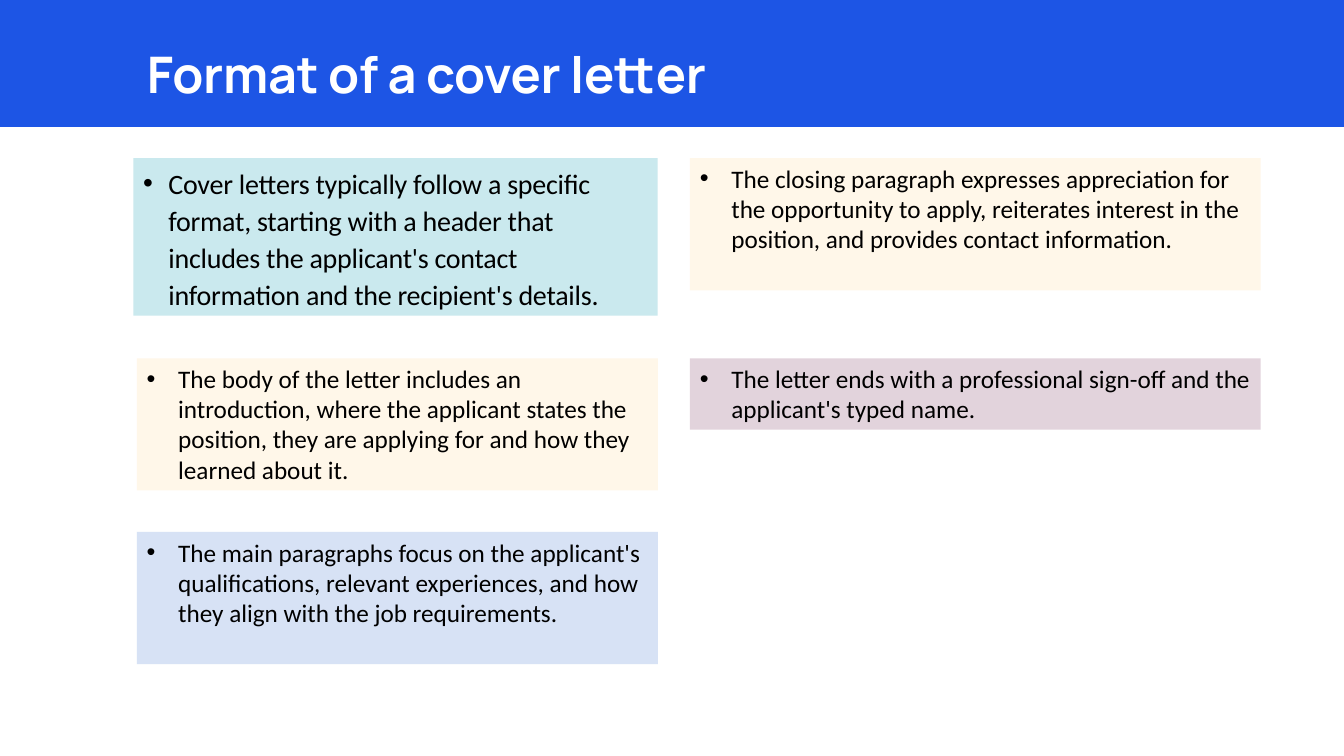
"""Build the slide on the format of a cover letter."""
from dataclasses import dataclass

from lxml.etree import SubElement
from pptx import Presentation
from pptx.dml.color import RGBColor
from pptx.enum.shapes import MSO_SHAPE
from pptx.enum.text import MSO_ANCHOR, PP_ALIGN
from pptx.oxml.ns import qn
from pptx.util import Pt


@dataclass(frozen=True)
class Theme:
    banner: str = "1D55E5"
    teal: str = "CAE9EE"
    cream: str = "FFF7E9"
    blue: str = "D7E2F5"
    mauve: str = "E2D3DC"
    title_ink: str = "FFFFFF"
    ink: str = "000000"
    title_size: int = 36
    lead_size: int = 20
    body_size: int = 18


theme = Theme()
TITLE = {"name": "Manrope", "size": Pt(theme.title_size), "bold": True}
LEAD = {"name": "Calibri", "size": Pt(theme.lead_size), "bold": False}
BODY = {"name": "Calibri", "size": Pt(theme.body_size), "bold": False}


def add_panel(slide, box, fill):
    panel = slide.shapes.add_shape(MSO_SHAPE.RECTANGLE, *map(Pt, box))
    panel.shadow.inherit = False
    panel.fill.solid()
    panel.fill.fore_color.rgb = RGBColor.from_string(fill)
    panel.line.fill.background()
    return panel


def write(paragraph, wording, text_format, ink, tracking=0):
    run = paragraph.add_run()
    run.text = wording
    for attribute, value in text_format.items():
        setattr(run.font, attribute, value)
    run.font.color.rgb = RGBColor.from_string(ink)
    if tracking:
        run.font._element.set("spc", str(tracking))


presentation = Presentation()
presentation.slide_width, presentation.slide_height = Pt(960), Pt(540)
slide = presentation.slides.add_slide(presentation.slide_layouts[6])

add_panel(slide, (0, 0, 960, 90.7), theme.banner)
heading = slide.shapes.add_textbox(Pt(97.9), Pt(21.6), Pt(790.6), Pt(61.2))
heading.text_frame.word_wrap = True
heading.text_frame.vertical_anchor = MSO_ANCHOR.MIDDLE
write(heading.text_frame.paragraphs[0], "Format of a cover letter", TITLE, theme.title_ink, -20)

LEFT, LEFT_WIDTH = 97.7, 372.2
RIGHT, RIGHT_WIDTH = 492.8, 407.6
TOP, MIDDLE, BOTTOM = 113, 256, 380
TALL, SHORT = 94.4, 51

letter_parts = [
    ((95.2, TOP, 374.6, 112.6), theme.teal, LEAD, 18, 1.1, -20,
     "Cover letters typically follow a specific format, starting with a header that "
     "includes the applicant's contact information and the recipient's details."),
    ((LEFT, MIDDLE, LEFT_WIDTH, TALL), theme.cream, BODY, 22.5, 1, 0,
     "The body of the letter includes an introduction, where the applicant states the "
     "position, they are applying for and how they learned about it."),
    ((LEFT, BOTTOM, LEFT_WIDTH, TALL), theme.blue, BODY, 22.5, 1, 0,
     "The main paragraphs focus on the applicant's qualifications, relevant experiences, "
     "and how they align with the job requirements."),
    ((RIGHT, TOP, RIGHT_WIDTH, TALL), theme.cream, BODY, 22.5, 1, 0,
     "The closing paragraph expresses appreciation for the opportunity to apply, "
     "reiterates interest in the position, and provides contact information."),
    ((RIGHT, MIDDLE, RIGHT_WIDTH, SHORT), theme.mauve, BODY, 22.5, 1, 0,
     "The letter ends with a professional sign-off and the applicant's typed name."),
]

for box, fill, text_format, indent, spacing, tracking, wording in letter_parts:
    frame = add_panel(slide, box, fill).text_frame
    frame.word_wrap = True
    frame.vertical_anchor = MSO_ANCHOR.TOP
    paragraph = frame.paragraphs[0]
    paragraph.alignment = PP_ALIGN.LEFT
    paragraph.line_spacing = float(spacing)
    properties = paragraph._p.get_or_add_pPr()
    properties.set("marL", str(Pt(indent)))
    properties.set("indent", str(-Pt(indent)))
    SubElement(properties, qn("a:buFont"), typeface="Arial")
    SubElement(properties, qn("a:buChar"), char="•")
    write(paragraph, wording, text_format, theme.ink, tracking)

presentation.save("out.pptx")
